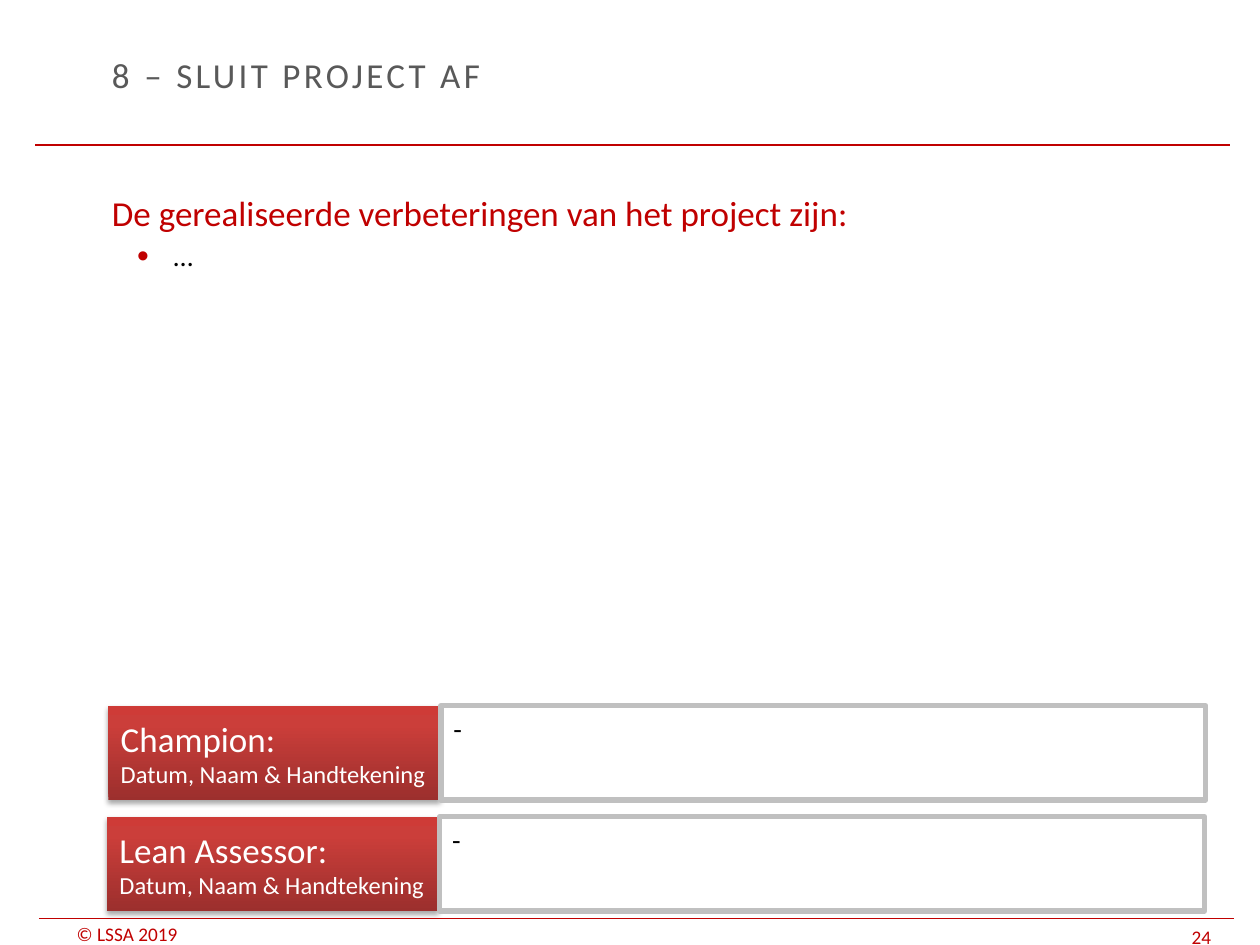
"""Build the project closing slide with its two sign-off rows."""
import dataclasses

import lxml.etree
import pptx
import pptx.dml.color
import pptx.enum.shapes
import pptx.enum.text
import pptx.oxml
import pptx.oxml.ns
import pptx.util

Pt = pptx.util.Pt
Rgb = pptx.dml.color.RGBColor.from_string
Shape = pptx.enum.shapes.MSO_SHAPE
Anchor = pptx.enum.text.MSO_ANCHOR
Align = pptx.enum.text.PP_ALIGN
qn = pptx.oxml.ns.qn
SPACE = 'xmlns:a="http://schemas.openxmlformats.org/drawingml/2006/main"'


@dataclasses.dataclass(frozen=True)
class Theme:
    font: str = "Calibri"
    red: str = "C00000"
    gray: str = "595959"
    edge: str = "C0C0C0"
    black: str = "000000"
    white: str = "FFFFFF"
    stops: tuple = ((0, "9C2F2D"), (80, "CB3E3A"), (100, "CE3B37"))
    head: int = 20
    body: int = 16
    note: int = 14
    foot: int = 11


class Deck:
    def __init__(self, theme, slide):
        self.theme = theme
        self.slide = slide

    def fill(self, shape, lines, anchor=Anchor.TOP, pad=3.6):
        frame = shape.text_frame
        frame.word_wrap = True
        frame.vertical_anchor = anchor
        frame.margin_top = frame.margin_bottom = Pt(pad)
        for index, (text, size, color) in enumerate(lines):
            para = frame.add_paragraph() if index else frame.paragraphs[0]
            para.text = text
            para.alignment = Align.LEFT
            para.font.name = self.theme.font
            para.font.size = Pt(size)
            para.font.color.rgb = Rgb(color)
        return frame

    def text(self, box, lines, anchor=Anchor.TOP, pad=3.6):
        shape = self.slide.shapes.add_textbox(*map(Pt, box))
        return self.fill(shape, lines, anchor, pad)

    def title(self, box, text):
        line = (text, self.theme.head, self.theme.gray)
        frame = self.text(box, [line], Anchor.MIDDLE)
        frame.paragraphs[0].runs[0].font._element.set("spc", "190")

    def bullet(self, para):
        props = para._p.get_or_add_pPr()
        props.set("marL", str(Pt(35.3)))
        props.set("indent", str(-Pt(20.9)))
        para.space_before = Pt(3.2)
        mark = (f'<a:buClr {SPACE}><a:srgbClr val="{self.theme.red}"/></a:buClr>',
                f'<a:buSzPct {SPACE} val="120000"/>',
                f'<a:buFont {SPACE} typeface="Arial"/>',
                f'<a:buChar {SPACE} char="•"/>')
        font = props.find(qn("a:defRPr"))
        for item in mark:
            font.addprevious(pptx.oxml.parse_xml(item))

    def rule(self, left, top, width):
        ends = map(Pt, (left, top, left + width, top))
        line = self.slide.shapes.add_connector(
            pptx.enum.shapes.MSO_CONNECTOR.STRAIGHT, *ends)
        line.line.color.rgb = Rgb(self.theme.red)
        line.line.width = Pt(0.75)
        lxml.etree.SubElement(line._element.spPr, qn("a:effectLst"))

    def rect(self, box):
        shape = self.slide.shapes.add_shape(Shape.RECTANGLE, *map(Pt, box))
        shape.shadow.inherit = False
        return shape

    def label(self, box, name):
        theme = self.theme
        shape = self.rect(box)
        shape.line.fill.background()
        shape.fill.gradient()
        shape.fill.gradient_angle = 90
        stops = shape._element.spPr.find(".//" + qn("a:gsLst"))
        for stop in list(stops):
            stops.remove(stop)
        for place, color in theme.stops:
            stops.append(pptx.oxml.parse_xml(
                f'<a:gs {SPACE} pos="{place * 1000}"><a:srgbClr val="{color}"/></a:gs>'))
        shape._element.spPr.find(qn("a:effectLst")).append(pptx.oxml.parse_xml(
            f'<a:outerShdw {SPACE} blurRad="{Pt(3.1)}" dist="{Pt(1.8)}" dir="5400000" '
            f'rotWithShape="0"><a:srgbClr val="{theme.black}">'
            '<a:alpha val="35000"/></a:srgbClr></a:outerShdw>'))
        self.fill(shape, [(name, theme.head, theme.white),
                          ("Datum, Naam & Handtekening", theme.note, theme.white)],
                  Anchor.MIDDLE)

    def field(self, box):
        shape = self.rect(box)
        shape.fill.solid()
        shape.fill.fore_color.rgb = Rgb(self.theme.white)
        shape.line.color.rgb = Rgb(self.theme.edge)
        shape.line.width = Pt(3)
        self.fill(shape, [("-", self.theme.body, self.theme.black)])

    def sign(self, left, top, name):
        self.label((left, top, 189.4, 54), name)
        self.field((left + 190.1, top, 437, 54))


def main():
    show = pptx.Presentation()
    show.slide_width, show.slide_height = Pt(720), Pt(540)
    theme = Theme()
    deck = Deck(theme, show.slides.add_slide(show.slide_layouts[6]))
    deck.text((36.7, 527, 102.2, 13), [("© LSSA 2019", theme.foot, theme.red)],
              Anchor.BOTTOM, 0)
    deck.text((673.9, 526.3, 46, 15.8), [("24", theme.foot, theme.red)],
              Anchor.BOTTOM, 0)
    deck.rule(20.2, 82.8, 682.6)
    deck.rule(22.3, 524.9, 682.6)
    deck.title((56.9, 18.7, 510.5, 47.5), "8 – SLUIT PROJECT AF")
    body = deck.text((56.9, 105.8, 623.5, 396.7), [
        ("De gerealiseerde verbeteringen van het project zijn:", theme.head, theme.red),
        ("…", theme.body, theme.black)])
    deck.bullet(body.paragraphs[1])
    deck.sign(61.9, 403.2, "Champion:")
    deck.sign(61.2, 466.6, "Lean Assessor:")
    show.save("out.pptx")


if __name__ == "__main__":
    main()
